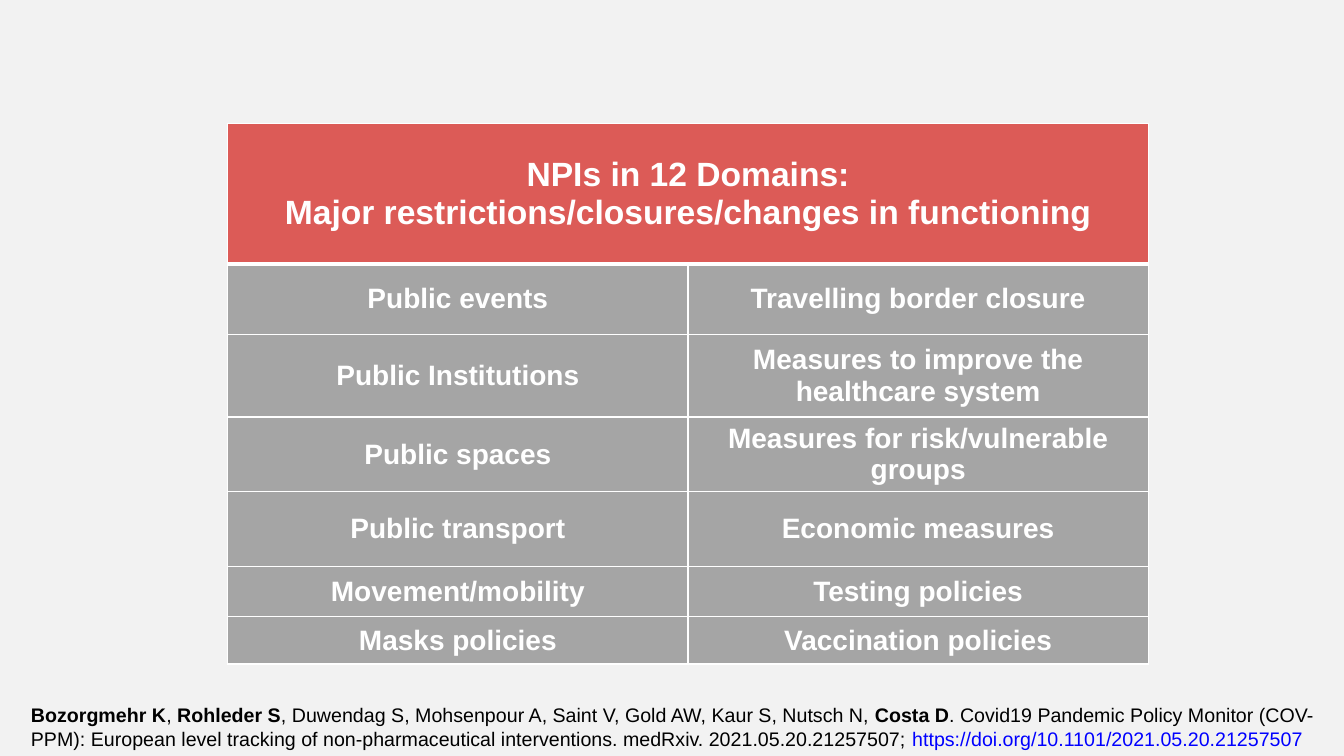
import pptx
import pptx.dml.color
import pptx.enum.text
import pptx.oxml
import pptx.oxml.ns
import pptx.util
from pptx.util import Cm

RGBColor = pptx.dml.color.RGBColor
BACKGROUND = RGBColor(0xF2, 0xF2, 0xF2)
RED = RGBColor(0xDC, 0x5B, 0x57)
GRAY = RGBColor(0xA5, 0xA5, 0xA5)
WHITE = RGBColor(0xFF, 0xFF, 0xFF)
BLACK = RGBColor(0, 0, 0)
LINK_BLUE = RGBColor(0, 0, 0xFF)

HEADING = "NPIs in 12 Domains:\nMajor restrictions/closures/changes in functioning"
DOMAINS = [
    ("Public events", "Travelling border closure"),
    ("Public Institutions", "Measures to improve the healthcare system"),
    ("Public spaces", "Measures for risk/vulnerable groups"),
    ("Public transport", "Economic measures"),
    ("Movement/mobility", "Testing policies"),
    ("Masks policies", "Vaccination policies"),
]
ROW_HEIGHTS = [3.53, 1.78, 2.08, 1.88, 1.88, 1.27, 1.19]
CITATION = [
    ("Bozorgmehr K", True, BLACK),
    (", ", False, BLACK),
    ("Rohleder S", True, BLACK),
    (", Duwendag S, Mohsenpour A, Saint V, Gold AW, Kaur S, Nutsch N, ", False, BLACK),
    ("Costa D", True, BLACK),
    (". Covid19 Pandemic Policy Monitor (COV-PPM): European level tracking of "
     "non-pharmaceutical interventions. medRxiv. 2021.05.20.21257507; ", False, BLACK),
    ("https://doi.org/10.1101/2021.05.20.21257507", False, LINK_BLUE),
]


class SlideBuilder:
    def __init__(self, presentation, font_name):
        self.font_name = font_name
        self.slide = presentation.slides.add_slide(presentation.slide_layouts[6])
        fill = self.slide.background.fill
        fill.solid()
        fill.fore_color.rgb = BACKGROUND

    def format_run(self, run, size, bold, color):
        run.font.name = self.font_name
        run.font.size = pptx.util.Pt(size)
        run.font.bold = bold
        run.font.color.rgb = color

    def border_cell(self, cell, top=1, bottom=1):
        """Draw white borders, with top and bottom widths in points."""
        properties = cell._tc.get_or_add_tcPr()
        for side, width in (("L", 1), ("R", 1), ("T", top), ("B", bottom)):
            properties.append(pptx.oxml.parse_xml(
                f'<a:ln{side} {pptx.oxml.ns.nsdecls("a")} w="{pptx.util.Pt(width)}">'
                f'<a:solidFill><a:srgbClr val="{WHITE}"/></a:solidFill></a:ln{side}>'))

    def fill_cell(self, cell, text, size, color):
        cell.fill.solid()
        cell.fill.fore_color.rgb = color
        cell.vertical_anchor = pptx.enum.text.MSO_ANCHOR.MIDDLE
        cell.margin_left = cell.margin_right = Cm(0.08)
        cell.margin_top = cell.margin_bottom = 0
        cell.text_frame.text = text
        for paragraph in cell.text_frame.paragraphs:
            paragraph.alignment = pptx.enum.text.PP_ALIGN.CENTER
            for run in paragraph.runs:
                self.format_run(run, size, True, WHITE)

    def add_domain_table(self, left, top, width):
        table = self.slide.shapes.add_table(
            len(ROW_HEIGHTS), 2, left, top, width, Cm(sum(ROW_HEIGHTS))).table
        for row, height in zip(table.rows, ROW_HEIGHTS):
            row.height = Cm(height)
        for column in range(2):
            self.border_cell(table.cell(0, column), bottom=3)
        table.cell(0, 0).merge(table.cell(0, 1))
        self.fill_cell(table.cell(0, 0), HEADING, 24, RED)
        for row, domains in enumerate(DOMAINS, start=1):
            for column, domain in enumerate(domains):
                cell = table.cell(row, column)
                self.border_cell(cell, top=3 if row == 1 else 1)
                self.fill_cell(cell, domain, 20, GRAY)

    def add_citation(self, left, top, width, height):
        text_frame = self.slide.shapes.add_textbox(left, top, width, height).text_frame
        text_frame.word_wrap = True
        text_frame.auto_size = pptx.enum.text.MSO_AUTO_SIZE.SHAPE_TO_FIT_TEXT
        for text, bold, color in CITATION:
            run = text_frame.paragraphs[0].add_run()
            run.text = text
            self.format_run(run, 14, bold, color)


def main():
    presentation = pptx.Presentation()
    presentation.slide_width = Cm(33.87)
    presentation.slide_height = Cm(19.05)
    builder = SlideBuilder(presentation, "Arial")
    builder.add_domain_table(Cm(5.74), Cm(3.12), Cm(23.2))
    builder.add_citation(Cm(0.53), Cm(17.6), Cm(33.6), Cm(1.45))
    presentation.save("out.pptx")


if __name__ == "__main__":
    main()
